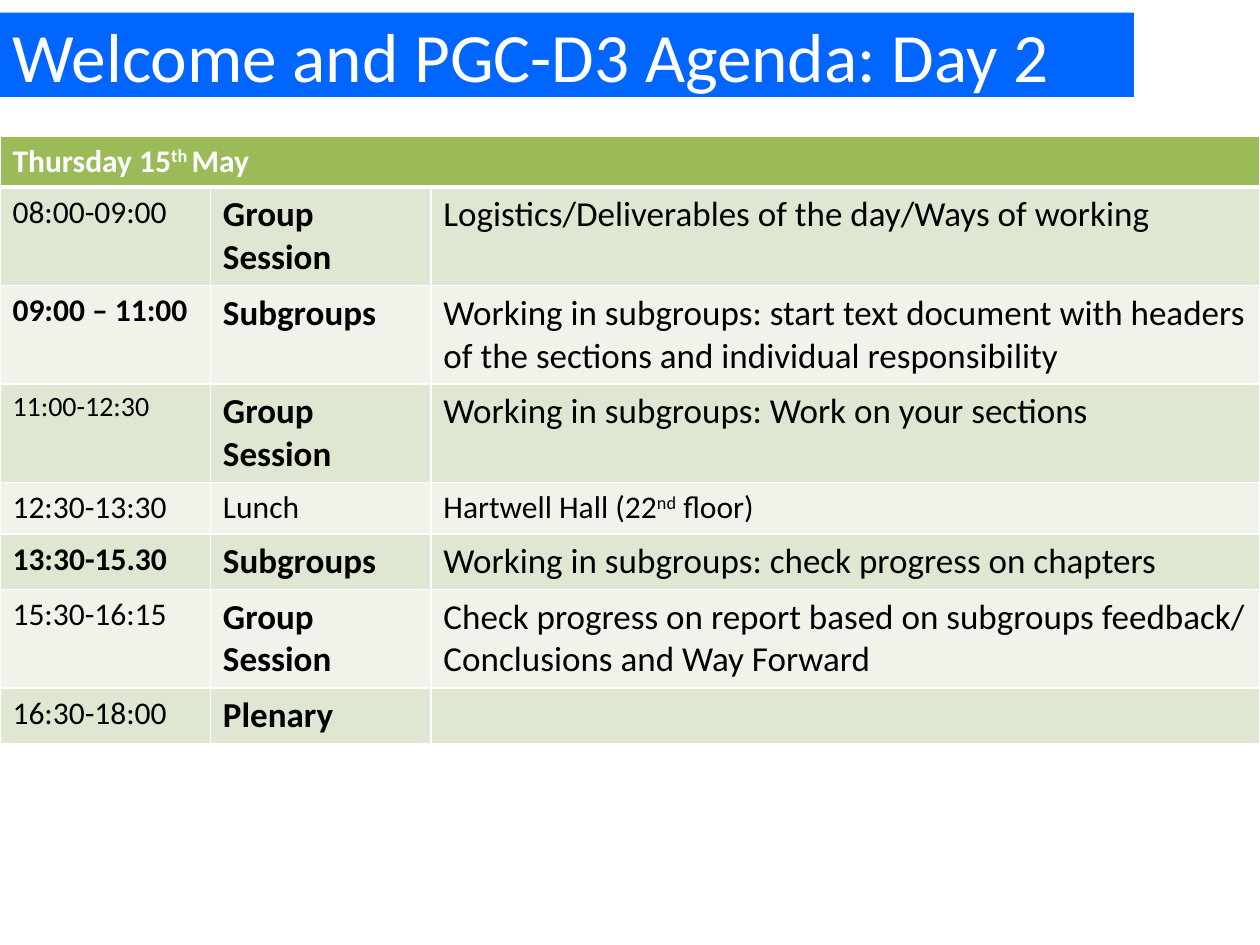
from lxml.etree import SubElement
from pptx import Presentation
from pptx.dml.color import RGBColor
from pptx.enum.text import MSO_ANCHOR, MSO_AUTO_SIZE, PP_ALIGN
from pptx.oxml.ns import qn
from pptx.util import Inches, Pt

WHITE = RGBColor(0xFF, 0xFF, 0xFF)
BLACK = RGBColor(0, 0, 0)
BLUE = RGBColor(0x00, 0x66, 0xFF)
GREEN = RGBColor(0x9B, 0xBB, 0x59)
BANDS = [RGBColor(0xDE, 0xE7, 0xD1), RGBColor(0xEF, 0xF3, 0xEA)]


def write(tf, text, size=18, bold=False, color=BLACK):
    """Fill a text frame; every second part between ^ marks is superscript."""
    p = tf.paragraphs[0]
    p.alignment = PP_ALIGN.LEFT
    p.font.size = Pt(size)
    for i, part in enumerate(text.split("^")):
        if not part:
            continue
        r = p.add_run()
        r.text = part
        r.font.name = "Calibri"
        r.font.size = Pt(size)
        r.font.bold = bold
        r.font.color.rgb = color
        if i % 2:
            r._r.get_or_add_rPr().set("baseline", "30000")


def border(cell, **widths):
    """Draw white cell borders; widths in points are keyed by L, R, T, B."""
    tcPr = cell._tc.get_or_add_tcPr()
    for side, width in widths.items():
        ln = SubElement(tcPr, qn(f"a:ln{side}"), w=str(Pt(width)))
        fill = SubElement(ln, qn("a:solidFill"))
        SubElement(fill, qn("a:srgbClr"), val=str(WHITE))


prs = Presentation()
prs.slide_width, prs.slide_height = Inches(10), Inches(7.5)
s = prs.slides.add_slide(prs.slide_layouts[5])

title = s.shapes.title
title.left, title.top = 0, Inches(0.1)
title.width, title.height = int(prs.slide_width * 0.9), Inches(0.67)
title.fill.solid()
title.fill.fore_color.rgb = BLUE
tf = title.text_frame
tf.word_wrap = True
tf.auto_size = MSO_AUTO_SIZE.NONE
tf.vertical_anchor = MSO_ANCHOR.MIDDLE
write(tf, "Welcome and PGC-D3 Agenda: Day 2", size=39.6, color=WHITE)

# Each entry is (text, size, bold)
GROUP = ("Group Session", 20, True)
SUBGROUPS = ("Subgroups", 20, True)
agenda = [
    [("08:00-09:00", 18, False), GROUP,
     ("Logistics/Deliverables of the day/Ways of working", 20, False)],
    [("09:00 – 11:00", 18, True), SUBGROUPS,
     ("Working in subgroups: start text document with headers of the "
      "sections and individual responsibility", 20, False)],
    [("11:00-12:30", 16, False), GROUP,
     ("Working in subgroups: Work on your sections", 20, False)],
    [("12:30-13:30", 18, False), ("Lunch", 18, False),
     ("Hartwell Hall (22^nd^ floor)", 18, False)],
    [("13:30-15.30", 18, True), SUBGROUPS,
     ("Working in subgroups: check progress on chapters", 20, False)],
    [("15:30-16:15", 18, False), GROUP,
     ("Check progress on report based on subgroups feedback/ "
      "Conclusions and Way Forward", 20, False)],
    [("16:30-18:00", 18, False), ("Plenary", 20, True), ("", 20, False)],
]
col_widths = [1.67, 1.75, 6.58]
row_heights = [0.4, 0.78, 0.78, 0.78, 0.41, 0.44, 0.78, 0.44]

table = s.shapes.add_table(
    len(row_heights), len(col_widths), 0, Inches(1.08),
    prs.slide_width, Inches(sum(row_heights))).table
for col, width in zip(table.columns, col_widths):
    col.width = Inches(width)
for row, height in zip(table.rows, row_heights):
    row.height = Inches(height)

for cell in table.rows[0].cells:
    border(cell, L=1, R=1, T=1, B=3)
    cell.fill.solid()
    cell.fill.fore_color.rgb = GREEN
header = table.cell(0, 0)
header.merge(table.cell(0, 2))
write(header.text_frame, "Thursday 15^th ^May", bold=True, color=WHITE)

for i, entries in enumerate(agenda):
    for cell, (text, size, bold) in zip(table.rows[i + 1].cells, entries):
        border(cell, L=1, R=1, T=1 if i else 3, B=1)
        cell.fill.solid()
        cell.fill.fore_color.rgb = BANDS[i % 2]
        write(cell.text_frame, text, size=size, bold=bold)

prs.save("out.pptx")
